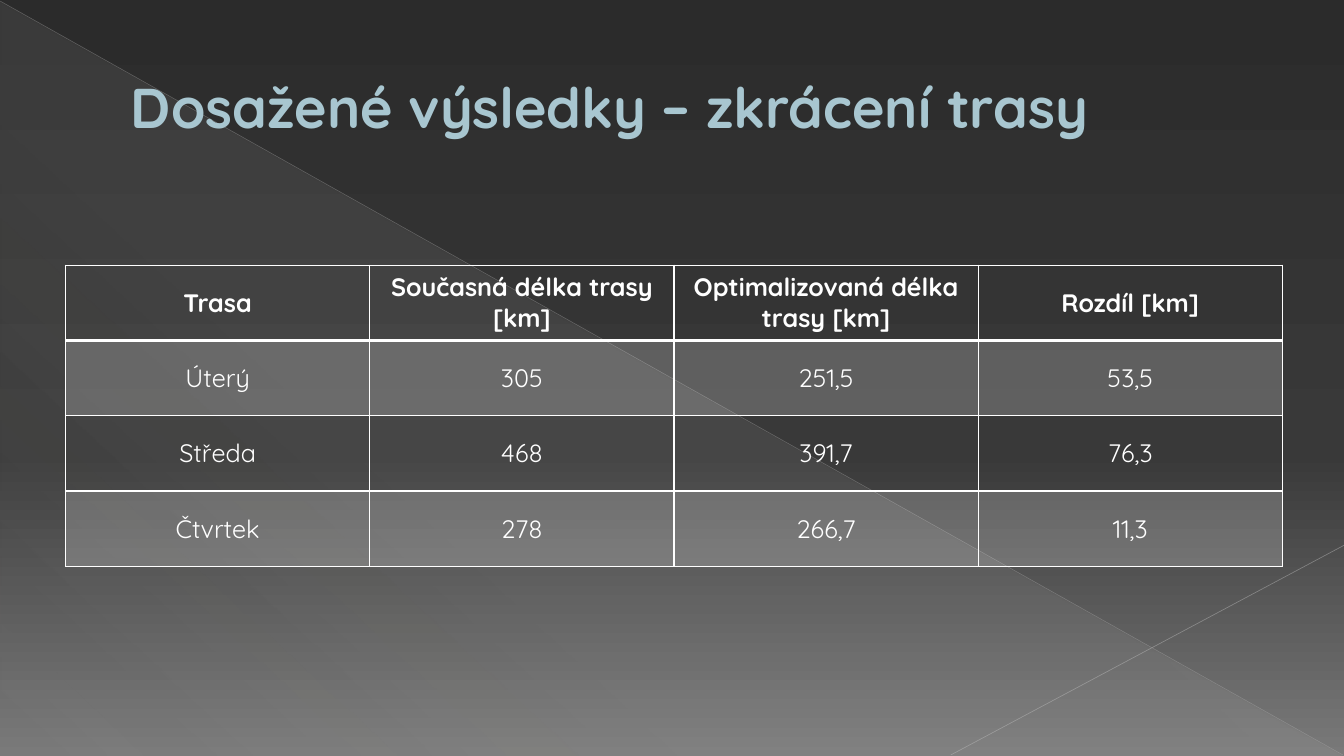
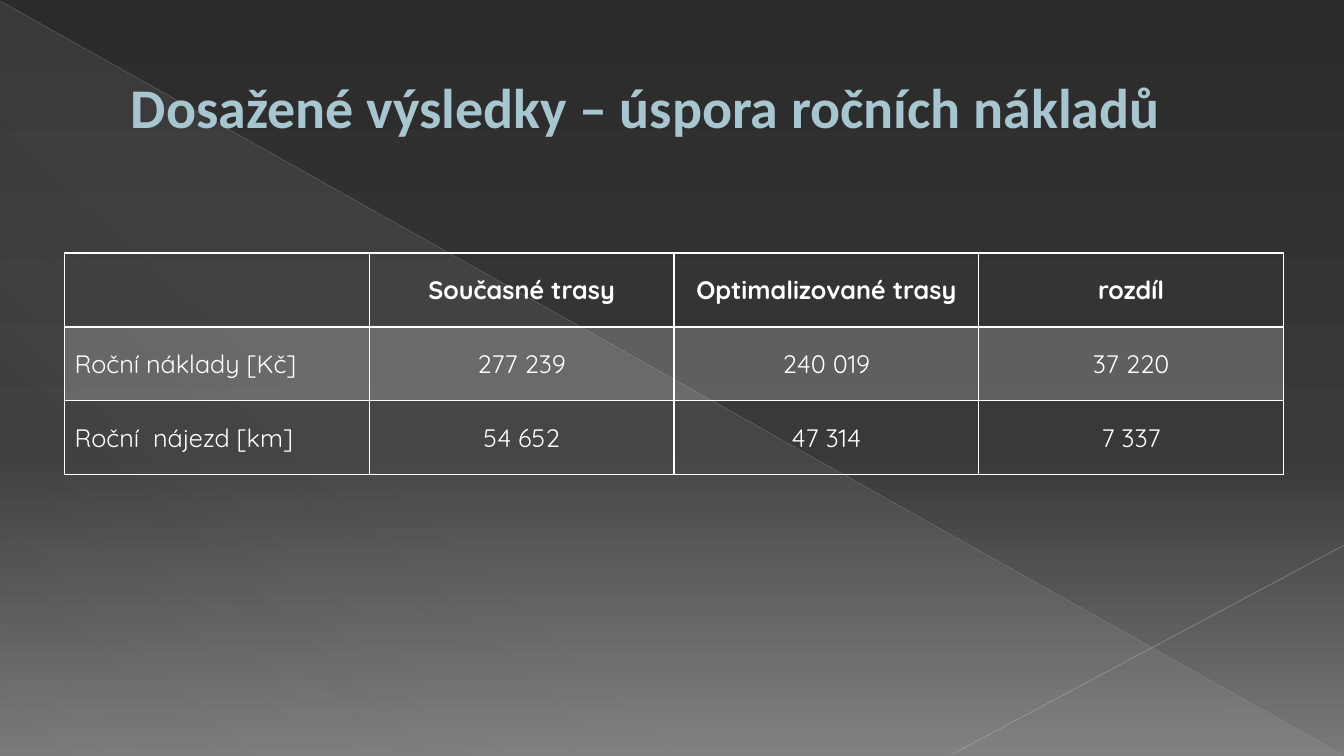
from dataclasses import dataclass

from lxml import etree
from pptx import Presentation
from pptx.dml.color import RGBColor as RGB
from pptx.enum.shapes import MSO_CONNECTOR as CONN, MSO_SHAPE as SHAPE
from pptx.enum.text import MSO_ANCHOR as ANCHOR, PP_ALIGN as ALIGN
from pptx.oxml import parse_xml
from pptx.oxml.ns import nsdecls, qn
from pptx.util import Inches, Pt


@dataclass(frozen=True)
class Theme:
    body_font: str = "Quicksand"
    title_color: str = "A8C6D0"
    title_outline: str = "4C6F7A"
    text: str = "FFFFFF"
    title_size: float = 40
    table_size: float = 18
    grid_width: float = 1
    header_rule: float = 2
    band_alpha: int = 20
    # Gradient stops: position, colour, opacity, all but the colour in percent
    backdrop: tuple = ((0, "2B2B2B", 100), (60, "393939", 100), (100, "797979", 100))
    sheen: tuple = ((0, "D4D2D0", 10), (70, "D4D2D0", 8), (100, "D4D2D0", 1))
    # Start, end, colour, width, opacity
    diagonals: tuple = (
        ((0, 0.01), (13.32, 7.49), "B7B7B7", 0.39, 35),
        ((13.33, 5.41), (9.43, 7.49), "BFBFBF", 0.47, 45),
    )


THEME = Theme()


def set_gradient(fill, owner, stops, angle):
    """Give fill, which lies inside the XML element owner, stops with opacity."""
    fill.gradient()
    grad = owner.find(".//" + qn("a:gradFill"))
    stop_xml = "".join(
        f'<a:gs pos="{pos * 1000}"><a:srgbClr val="{color}">'
        f'<a:alpha val="{alpha * 1000}"/></a:srgbClr></a:gs>'
        for pos, color, alpha in stops
    )
    grad.getparent().replace(grad, parse_xml(
        f'<a:gradFill {nsdecls("a")} rotWithShape="1"><a:gsLst>{stop_xml}</a:gsLst>'
        f'<a:lin ang="{angle * 60000}" scaled="0"/></a:gradFill>'))


def set_alpha(owner, percent):
    color = owner.find(".//" + qn("a:srgbClr"))
    etree.SubElement(color, qn("a:alpha")).set("val", str(percent * 1000))


def set_font(font, **values):
    font.color.rgb = RGB.from_string(values.pop("color"))
    for name, value in values.items():
        setattr(font, name, value)


def add_diagonal(slide, start, end, color, width, alpha):
    line = slide.shapes.add_connector(CONN.STRAIGHT, *map(Inches, start + end))
    line.line.color.rgb = RGB.from_string(color)
    line.line.width = Pt(width)
    sp_pr = line._element.spPr
    set_alpha(sp_pr, alpha)
    etree.SubElement(sp_pr, qn("a:effectLst"))


def add_decoration(slide):
    sp = slide.shapes.add_shape(
        SHAPE.RIGHT_TRIANGLE, *map(Inches, (0.01, 0.02, 13.31, 7.48)))
    sp.shadow.inherit = False
    sp.line.fill.background()
    set_gradient(sp.fill, sp._element.spPr, THEME.sheen, 133)
    for diagonal in THEME.diagonals:
        add_diagonal(slide, *diagonal)


def add_title(slide, text, font):
    box = slide.shapes.add_textbox(*map(Inches, (0.67, 0.29, 12, 1.53)))
    tf = box.text_frame
    tf.word_wrap = True
    tf.vertical_anchor = ANCHOR.MIDDLE
    p = tf.paragraphs[0]
    p._p.get_or_add_pPr().set("marL", str(Inches(0.53)))
    r = p.add_run()
    r.text = text
    set_font(r.font, name=font, size=Pt(THEME.title_size), bold=True,
             color=THEME.title_color)
    r._r.get_or_add_rPr().insert(0, parse_xml(
        f'<a:ln {nsdecls("a")} w="{Pt(0.5)}"><a:solidFill>'
        f'<a:srgbClr val="{THEME.title_outline}"/></a:solidFill></a:ln>'))


def add_borders(cell, **widths):
    """Draw the sides given as L, R, T and B, which must come in that order."""
    tc_pr = cell._tc.get_or_add_tcPr()
    for i, (side, width) in enumerate(widths.items()):
        tc_pr.insert(i, parse_xml(
            f'<a:ln{side} {nsdecls("a")} w="{Pt(width)}"><a:solidFill>'
            f'<a:srgbClr val="{THEME.text}"/></a:solidFill></a:ln{side}>'))


def format_cell(cell, text, row, align):
    cell.text = text
    cell.vertical_anchor = ANCHOR.MIDDLE
    p = cell.text_frame.paragraphs[0]
    p.alignment = align
    set_font(p.font if not p.runs else p.runs[0].font, name=THEME.body_font,
             size=Pt(THEME.table_size), bold=row == 0, color=THEME.text)
    if row % 2:
        cell.fill.solid()
        cell.fill.fore_color.rgb = RGB.from_string(THEME.text)
        set_alpha(cell._tc.tcPr.find(qn("a:solidFill")), THEME.band_alpha)
    else:
        cell.fill.background()
    grid, rule = THEME.grid_width, THEME.header_rule
    add_borders(cell, L=grid, R=grid, T=rule if row == 1 else grid,
                B=rule if row == 0 else grid)


def add_table(slide, rows, frame, label_align):
    left, top, width, height = map(Inches, frame)
    table = slide.shapes.add_table(
        len(rows), len(rows[0]), left, top, width, height).table
    table.first_row = table.horz_banding = False
    for i, row in enumerate(rows):
        for j, text in enumerate(row):
            align = label_align if i and not j else ALIGN.CENTER
            format_cell(table.cell(i, j), text, i, align)


def add_result_slide(prs, title, title_font, rows, frame, label_align):
    slide = prs.slides.add_slide(prs.slide_layouts[6])
    add_decoration(slide)
    add_title(slide, title, title_font)
    add_table(slide, rows, frame, label_align)


def main():
    prs = Presentation()
    prs.slide_width, prs.slide_height = Inches(13.33), Inches(7.5)
    master = prs.slide_master
    set_gradient(master.background.fill, master._element, THEME.backdrop, 90)

    add_result_slide(
        prs, "Dosažené výsledky – zkrácení trasy", THEME.body_font,
        [
            ("Trasa", "Současná délka trasy [km]",
             "Optimalizovaná délka trasy [km]", "Rozdíl [km]"),
            ("Úterý", "305", "251,5", "53,5"),
            ("Středa", "468", "391,7", "76,3"),
            ("Čtvrtek", "278", "266,7", "11,3"),
        ],
        (0.65, 2.63, 12.07, 2.99), ALIGN.CENTER)
    add_result_slide(
        prs, "Dosažené výsledky – úspora ročních nákladů", "Calibri",
        [
            ("", "Současné trasy", "Optimalizované trasy", "rozdíl"),
            ("Roční náklady [Kč]", "277 239", "240 019", "37 220"),
            ("Roční  nájezd [km]", "54 652", "47 314", "7 337"),
        ],
        (0.64, 2.51, 12.09, 2.2), ALIGN.LEFT)
    prs.save("out.pptx")


if __name__ == "__main__":
    main()
